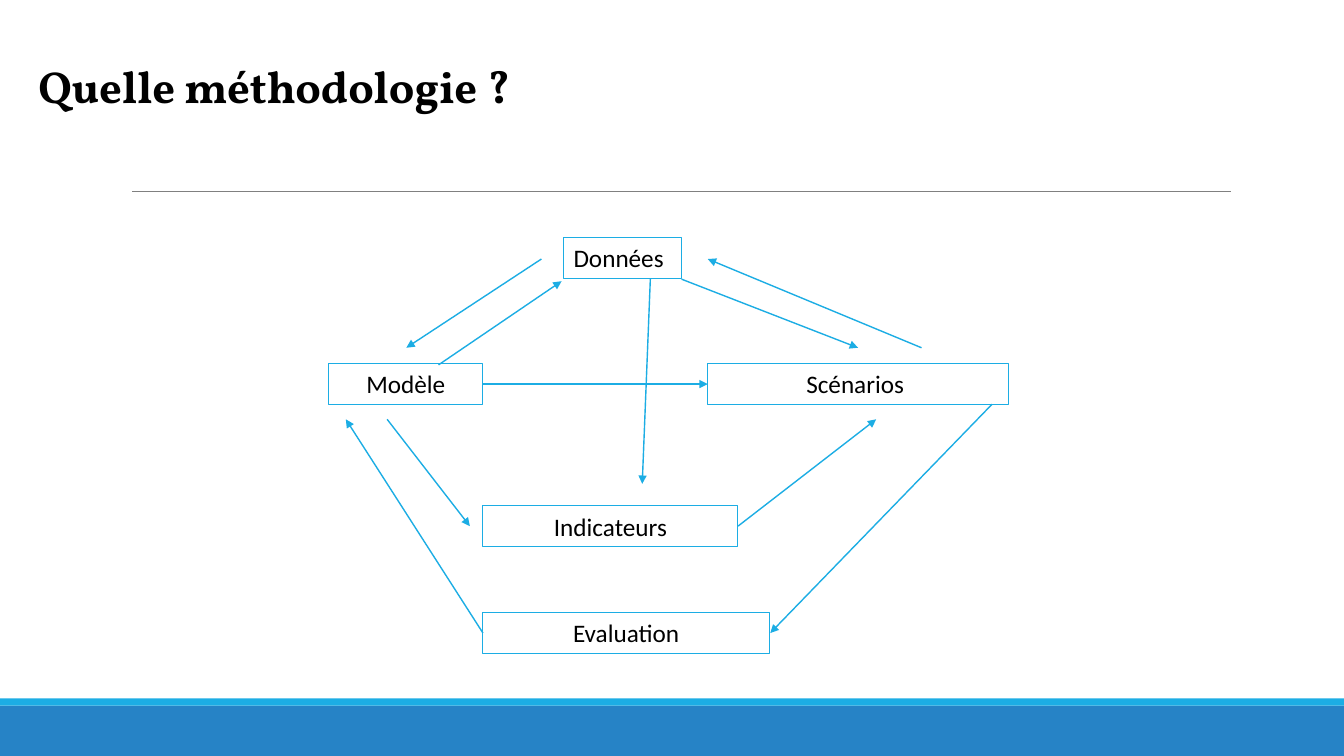
from pptx import Presentation
from pptx import util as u
from pptx.dml.color import RGBColor
from pptx.enum import shapes, text
from pptx.oxml.ns import qn
from lxml import etree

CYAN, BLUE, GREY, BLACK = "1CADE4", "2683C6", "808080", "000000"


def rgb(hex_code):
    return RGBColor.from_string(hex_code)


def add_line(x1, y1, x2, y2, color, width, arrow=False):
    c = s.shapes.add_connector(shapes.MSO_CONNECTOR.STRAIGHT,
                               *[u.Inches(v) for v in (x1, y1, x2, y2)])
    c.line.color.rgb = rgb(color)
    c.line.width = u.Pt(width)
    if arrow:
        etree.SubElement(c.line._get_or_add_ln(), qn("a:tailEnd"), type="triangle")
    etree.SubElement(c._element.spPr, qn("a:effectLst"))


prs = Presentation()
prs.slide_width, prs.slide_height = u.Inches(13.33), u.Inches(7.5)
s = prs.slides.add_slide(prs.slide_layouts[5])

# Footer bands and rule under the title
for top, height, color in [(7, 0.5, BLUE), (6.93, 0.07, CYAN)]:
    sp = s.shapes.add_shape(shapes.MSO_SHAPE.RECTANGLE, 0, u.Inches(top),
                            prs.slide_width, u.Inches(height))
    sp.shadow.inherit = False
    sp.fill.solid()
    sp.fill.fore_color.rgb = rgb(color)
    sp.line.fill.background()
add_line(1.31, 1.9, 12.21, 1.9, GREY, 0.5)

# Title
title = s.shapes.title
title.left, title.top, title.width, title.height = [
    u.Inches(v) for v in (0.28, 0.53, 7.13, 0.64)]
tf = title.text_frame
tf.text = "Quelle méthodologie ?"
tf.vertical_anchor = text.MSO_ANCHOR.TOP
tf.auto_size = text.MSO_AUTO_SIZE.SHAPE_TO_FIT_TEXT
p = tf.paragraphs[0]
p.alignment = text.PP_ALIGN.LEFT
for name, value in {"name": "Vollkorn", "size": u.Pt(32), "bold": True}.items():
    setattr(p.font, name, value)
p.font.color.rgb = rgb(BLACK)

# Boxes: label, left, top, width, alignment, wrap
BOX_H = 0.4
ROW_DATA, ROW_MODEL, ROW_INDIC, ROW_EVAL = 2.36, 3.61, 5.02, 6.08
COL_MODEL, COL_CENTER, COL_SCEN = 3.26, 4.79, 7.02
LEFT, CENTER = text.PP_ALIGN.LEFT, text.PP_ALIGN.CENTER
boxes = [
    ("Modèle", COL_MODEL, ROW_MODEL, COL_CENTER - COL_MODEL, CENTER, True),
    ("Scénarios ", COL_SCEN, ROW_MODEL, 2.98, CENTER, True),
    ("Données", 5.59, ROW_DATA, 1.17, LEFT, False),
    ("Indicateurs", COL_CENTER, ROW_INDIC, 2.53, CENTER, True),
    ("Evaluation", COL_CENTER, ROW_EVAL, 2.84, CENTER, True),
]
for label, left, top, width, align, wrap in boxes:
    sp = s.shapes.add_shape(shapes.MSO_SHAPE.RECTANGLE,
                            *[u.Inches(v) for v in (left, top, width, BOX_H)])
    sp.shadow.inherit = False
    sp.fill.background()
    sp.line.color.rgb = rgb(CYAN)
    sp.line.width = u.Pt(0.75)
    tf = sp.text_frame
    tf.text = label
    tf.word_wrap = wrap
    tf.vertical_anchor = text.MSO_ANCHOR.TOP
    p = tf.paragraphs[0]
    p.alignment = align
    for name, value in {"name": "Calibri", "size": u.Pt(18)}.items():
        setattr(p.font, name, value)
    p.font.color.rgb = rgb(BLACK)

# Arrows: from x, y to x, y
MID = BOX_H / 2
ABOVE, BELOW = 3.45, 4.16  # arrow ends just outside the middle row
DATA_MID, DATA_BOTTOM = 2.57, 2.77
MODEL_MID, INDIC_MID, EVAL_MID = [row + MID for row in (ROW_MODEL, ROW_INDIC, ROW_EVAL)]
arrows = [
    (5.37, DATA_MID, 4.03, ABOVE),                 # Données to Modèle
    (4.35, 3.62, 5.57, 2.79),                      # Modèle to Données
    (COL_CENTER, MODEL_MID, COL_SCEN, MODEL_MID),  # Modèle to Scénarios
    (9.14, ABOVE, COL_SCEN, DATA_MID),             # Scénarios to Données
    (6.76, DATA_BOTTOM, 8.51, ABOVE),              # Données to Scénarios
    (3.84, BELOW, 4.66, INDIC_MID),                # Modèle to Indicateurs
    (7.32, INDIC_MID, 8.69, BELOW),                # Indicateurs to Scénarios
    (9.84, ROW_MODEL + BOX_H, 7.64, EVAL_MID),     # Scénarios to Evaluation
    (COL_CENTER, EVAL_MID, 3.43, BELOW),           # Evaluation to Modèle
    (6.45, DATA_BOTTOM, 6.37, 4.8),                # Données to Indicateurs
]
for ends in arrows:
    add_line(*ends, CYAN, 1, arrow=True)

prs.save("out.pptx")
